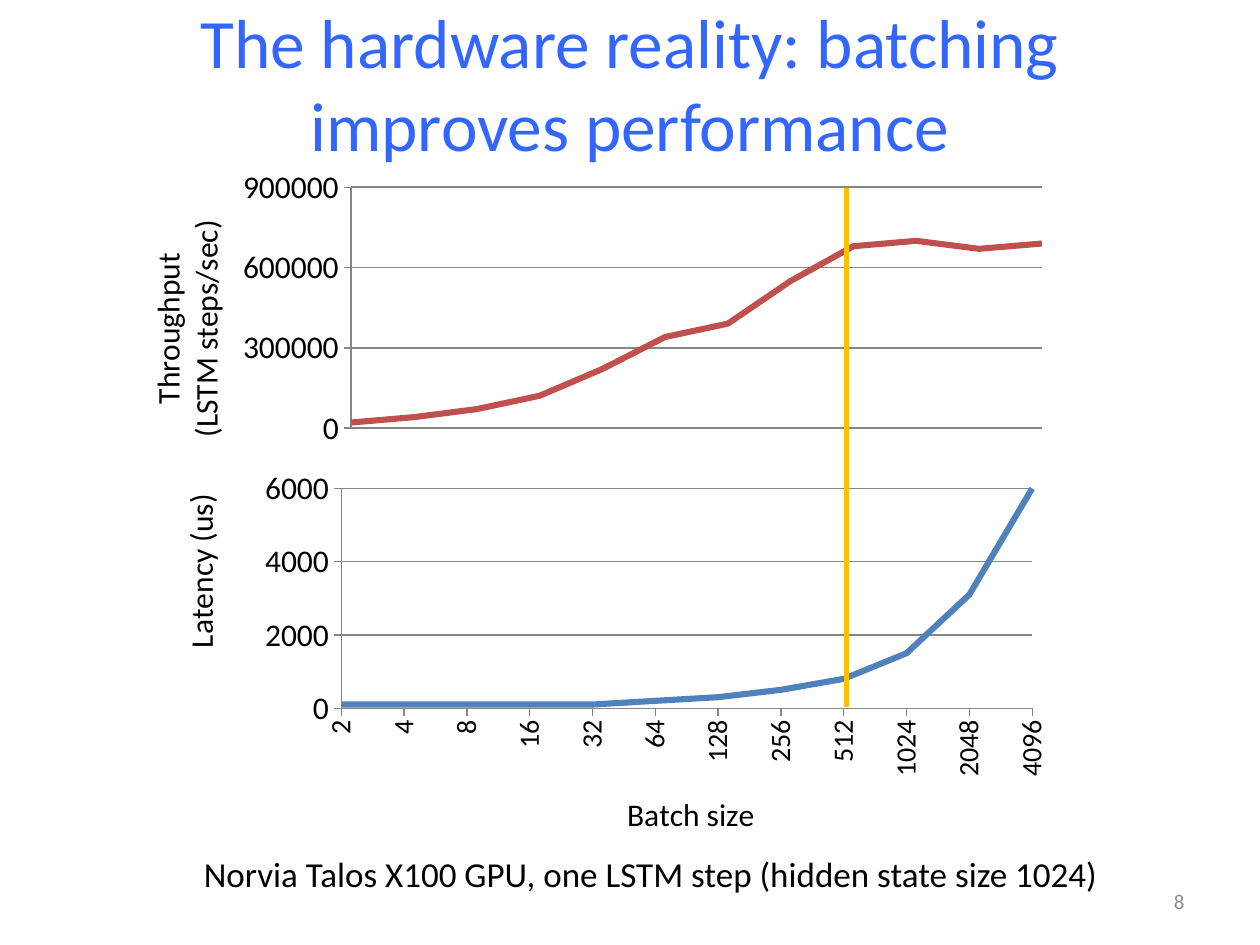
"""Slide with stacked throughput and latency charts over batch size."""
from pptx import Presentation
from pptx import util as u
from pptx.chart import data as chart_data
from pptx.dml import color
from pptx.enum import chart as chart_enums, shapes, text
from pptx.oxml import parse_xml
from pptx.oxml.ns import nsdecls, qn

COLORS = {"title": "3366FF", "text": "000000", "number": "8C8C8C", "grid": "868686",
          "latency": "4F81BD", "throughput": "C0504D", "marker": "FFC000"}
FONT = "Calibri"


def style_font(font, size, name):
    font.name = FONT
    font.size = u.Pt(size)
    font.bold = False
    font.color.rgb = color.RGBColor.from_string(COLORS[name])


def place(parent, index, **values):
    for layout in parent.findall(qn("c:layout")):
        parent.remove(layout)
    settings = "".join(f'<c:{key} val="{value}"/>' for key, value in values.items())
    parent.insert(index, parse_xml(
        f'<c:layout {nsdecls("c")}><c:manualLayout>{settings}</c:manualLayout></c:layout>'))


presentation = Presentation()
presentation.slide_width, presentation.slide_height = u.Pt(720), u.Pt(540)
slide = presentation.slides.add_slide(presentation.slide_layouts[6])

batch_sizes = [str(2 ** power) for power in range(1, 13)]
charts = [
    dict(name="latency", box=(67, 248.4, 533.5, 236.9), categories=batch_sizes,
         values=[100, 100, 100, 100, 100, 200, 300, 500, 800, 1500, 3100, 6000],
         top=6000, step=2000, title="Latency (us)", title_at=(0.06, 0.13),
         plot=(0.24, 0.13, 0.74, 0.53), grid=0.75),
    dict(name="throughput", box=(65.5, 92.2, 540.7, 165.6),
         categories=[str(number) for number in range(1, 13)],
         values=[20000, 40000, 70000, 120000, 220000, 340000,
                 390000, 550000, 680000, 700000, 670000, 690000],
         top=900000, step=300000, title="Throughput\n(LSTM steps/sec)", title_at=(0.03, 0.19),
         plot=(0.25, 0.09, 0.73, 0.83), grid=1),
]
for item in charts:
    data = chart_data.CategoryChartData()
    data.categories = item["categories"]
    data.add_series("Series 1", item["values"])
    chart = slide.shapes.add_chart(chart_enums.XL_CHART_TYPE.LINE,
                                   *map(u.Pt, item["box"]), data).chart
    chart.has_title = chart.has_legend = False
    style_font(chart.font, 18, "text")
    plot = chart.plots[0]
    plot.vary_by_categories = False
    series = plot.series[0]
    series.smooth = False
    series.marker.style = chart_enums.XL_MARKER_STYLE.NONE
    series.format.line.width = u.Pt(3.5)
    series.format.line.color.rgb = color.RGBColor.from_string(COLORS[item["name"]])

    value_axis, category_axis = chart.value_axis, chart.category_axis
    value_axis.minimum_scale, value_axis.maximum_scale = 0, item["top"]
    value_axis.major_unit = item["step"]
    value_axis.tick_labels.number_format = "General"
    value_axis.tick_labels.number_format_is_linked = False
    value_axis.has_major_gridlines = True
    for line in (value_axis.major_gridlines.format.line, value_axis.format.line,
                 category_axis.format.line):
        line.width = u.Pt(item["grid"])
        line.color.rgb = color.RGBColor.from_string(COLORS["grid"])
    for axis in (value_axis, category_axis):
        axis.major_tick_mark = chart_enums.XL_TICK_MARK.OUTSIDE

    titles = [(value_axis, item["title"], item["title_at"])]
    if item["name"] == "latency":
        style_font(category_axis.tick_labels.font, 16, "text")
        labels = category_axis._element.find(qn("c:txPr")).find(qn("a:bodyPr"))
        labels.set("rot", "-5400000")
        labels.set("vert", "horz")
        titles.append((category_axis, "Batch size", (0.54, 0.85)))
    else:
        category_axis.visible = False
    for axis, wording, (x, y) in titles:
        frame = axis.axis_title.text_frame
        frame.text = wording
        for paragraph in frame.paragraphs:
            style_font(paragraph.runs[0].font, 18, "text")
        place(axis.axis_title._element, 1, xMode="edge", yMode="edge", x=x, y=y)

    value_axis._element.find(qn("c:majorUnit")).addprevious(
        parse_xml(f'<c:crossBetween {nsdecls("c")} val="midCat"/>'))
    x, y, width, height = item["plot"]
    place(value_axis._element.getparent(), 0, layoutTarget="inner",
          xMode="edge", yMode="edge", x=x, y=y, w=width, h=height)

align, anchor = text.PP_ALIGN, text.MSO_ANCHOR
for wording, box, size, name, alignment, vertical, wrap in [
    ("The hardware reality: batching improves performance",
     (36, 2.2, 648, 90), 39.6, "title", align.CENTER, anchor.MIDDLE, True),
    ("Norvia Talos X100 GPU, one LSTM step (hidden state size 1024)",
     (109.4, 483.8, 535, 31.7), 20, "text", align.LEFT, anchor.TOP, False),
    ("8", (516.2, 500.4, 167.8, 28.8), 12, "number", align.RIGHT, anchor.MIDDLE, True),
]:
    frame = slide.shapes.add_textbox(*map(u.Pt, box)).text_frame
    frame.text = wording
    frame.word_wrap = wrap
    frame.vertical_anchor = vertical
    paragraph = frame.paragraphs[0]
    paragraph.alignment = alignment
    style_font(paragraph.runs[0].font, size, name)

marker = slide.shapes.add_connector(shapes.MSO_CONNECTOR.STRAIGHT,
                                    u.Pt(483.8), u.Pt(403.9), u.Pt(483.8), u.Pt(107.3))
marker.line.width = u.Pt(3)
marker.line.color.rgb = color.RGBColor.from_string(COLORS["marker"])
marker._element.spPr.append(parse_xml(f'<a:effectLst {nsdecls("a")}/>'))

presentation.save("out.pptx")
